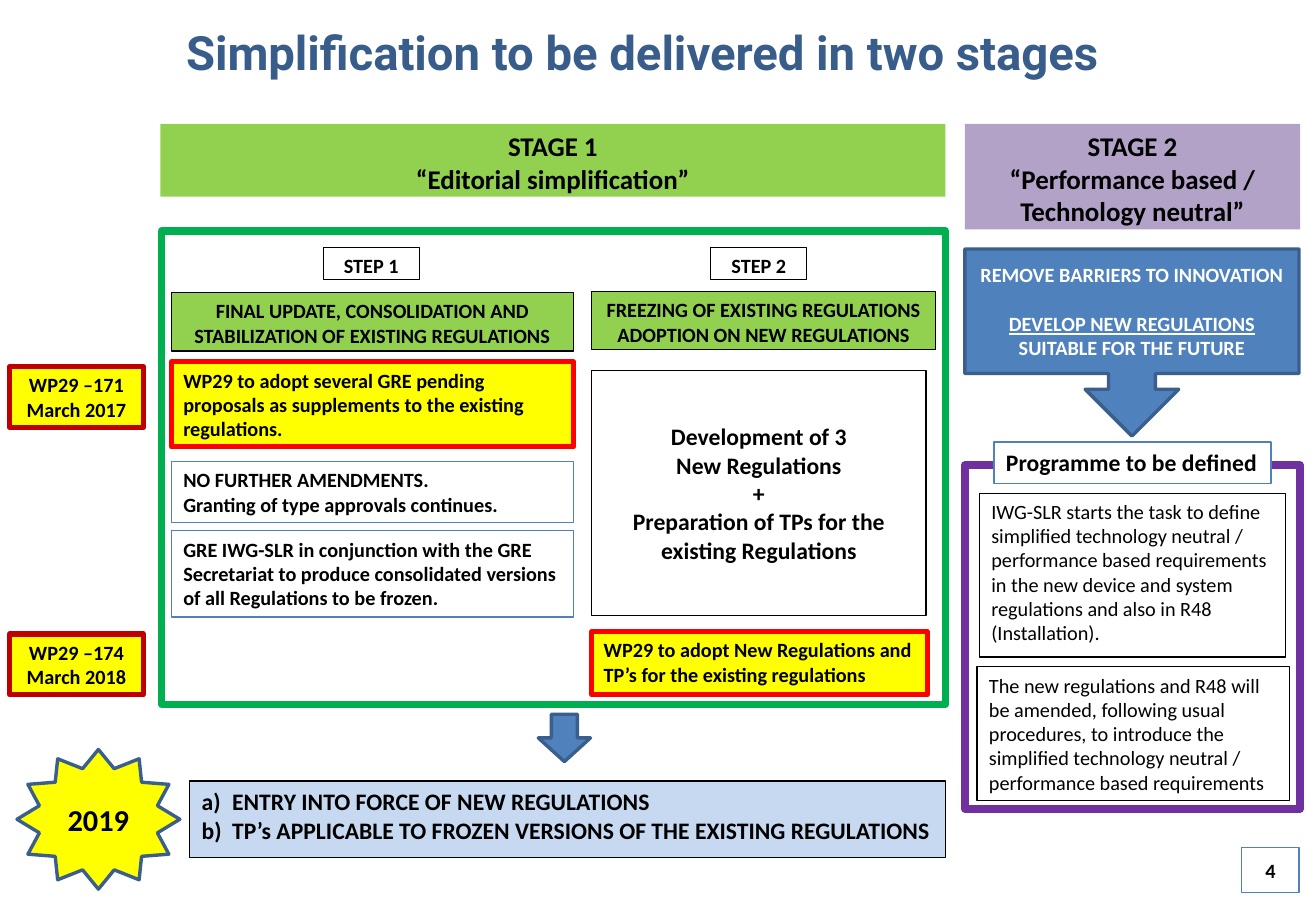
from lxml import etree
from pptx import Presentation
from pptx.dml.color import RGBColor
from pptx.enum.shapes import MSO_SHAPE
from pptx.enum.text import MSO_ANCHOR, MSO_AUTO_SIZE, PP_ALIGN
from pptx.oxml.ns import qn
from pptx.util import Inches, Pt

RECTANGLE = MSO_SHAPE.RECTANGLE
DOWN_ARROW = MSO_SHAPE.DOWN_ARROW
CALLOUT = MSO_SHAPE.DOWN_ARROW_CALLOUT
STAR = MSO_SHAPE.STAR_12_POINT
LEFT, CENTER = PP_ALIGN.LEFT, PP_ALIGN.CENTER
TOP, MIDDLE = MSO_ANCHOR.TOP, MSO_ANCHOR.MIDDLE
NO_AUTOFIT = MSO_AUTO_SIZE.NONE

BLACK, WHITE, YELLOW = "000000", "FFFFFF", "FFFF00"
GREEN, DARK_GREEN, PURPLE, LILAC = "92D050", "00B050", "7030A0", "B3A2C7"
BLUE, DARK_BLUE, PALE_BLUE, TITLE_BLUE = "4F81BD", "3A5F8C", "C6D9F1", "385D8A"
RED, DARK_RED = "FF0000", "C00000"


def color(value):
    return RGBColor.from_string(value)


def write(shape, text, size=12, bold=True, font="Calibri", text_color=BLACK,
          align=LEFT, anchor=TOP, wrap=True):
    frame = shape.text_frame
    frame.auto_size = NO_AUTOFIT
    frame.word_wrap = wrap
    frame.vertical_anchor = anchor
    frame.text = text
    for paragraph in frame.paragraphs:
        paragraph.alignment = align
        paragraph.space_before = Pt(0)
        for run in paragraph.runs:
            run.font.name = font
            run.font.size = Pt(size)
            run.font.bold = bold
            run.font.color.rgb = color(text_color)


class StageSlide:
    def __init__(self, presentation):
        layout = presentation.slide_layouts.get_by_name("Title and Content")
        self.slide = presentation.slides.add_slide(layout)

    def place(self, shape, bounds):
        shape.left, shape.top, shape.width, shape.height = map(Inches, bounds)

    def paint(self, shape, fill=None, line=None, width=0.75):
        if fill:
            shape.fill.solid()
            shape.fill.fore_color.rgb = color(fill)
        else:
            shape.fill.background()
        if line:
            shape.line.color.rgb = color(line)
            shape.line.width = Pt(width)
        else:
            shape.line.fill.background()

    def title(self, bounds, text):
        shape = self.slide.shapes.title
        self.place(shape, bounds)
        write(shape, text, size=28, font="Roboto", text_color=TITLE_BLUE,
              align=CENTER, anchor=MIDDLE)

    def lettered_list(self, bounds, items, fill, line):
        shape = self.slide.placeholders[1]
        self.place(shape, bounds)
        self.paint(shape, fill, line)
        write(shape, "\n".join(items), size=14)
        for paragraph in shape.text_frame.paragraphs:
            properties = paragraph._p.get_or_add_pPr()
            properties.set("marL", str(Inches(0.25)))
            properties.set("indent", str(Inches(-0.25)))
            bullet = etree.SubElement(properties, qn("a:buAutoNum"))
            bullet.set("type", "alphaLcParenR")

    def box(self, bounds, text="", fill=None, line=None, width=0.75,
            kind=RECTANGLE, **text_format):
        shape = self.slide.shapes.add_shape(kind, *map(Inches, bounds))
        shape.shadow.inherit = False
        self.paint(shape, fill, line, width)
        if text:
            write(shape, text, **text_format)
        return shape

    def callout(self, bounds, heading, goal, ending):
        shape = self.box(bounds, f"{heading}\n{goal}", BLUE, DARK_BLUE, 2, CALLOUT,
                         text_color=WHITE, align=CENTER, anchor=MIDDLE)
        shape.adjustments[3] = 0.666
        paragraph = shape.text_frame.paragraphs[1]
        paragraph.space_before = Pt(14.6)
        paragraph.runs[0].font.underline = True
        run = paragraph.add_run()
        run.text = ending
        run.font.name = "Calibri"
        run.font.size = Pt(12)
        run.font.bold = True
        run.font.color.rgb = color(WHITE)


def main():
    presentation = Presentation()
    presentation.slide_width = Inches(10.83)
    presentation.slide_height = Inches(7.5)
    page = StageSlide(presentation)

    page.title((0.75, 0.07, 9.07, 0.71), "Simplification to be delivered in two stages")

    page.box((7.94, 3.83, 2.76, 2.83), line=PURPLE, width=4.5)
    page.box((8.06, 4.06, 2.52, 1.35),
             "IWG-SLR starts the task to define simplified technology neutral / "
             "performance based requirements in the new device and system "
             "regulations and also in R48 (Installation).", line=BLACK, bold=False)
    page.box((8.04, 5.49, 2.57, 1.1),
             "The new regulations and R48 will be amended, following usual procedures, "
             "to introduce the simplified technology neutral / performance based "
             "requirements", line=BLACK, bold=False)

    for top, session in ((3.02, "WP29 –171 March 2017"), (5.22, "WP29 –174 March 2018")):
        page.box((0.08, top, 1.1, 0.5), session, YELLOW, DARK_RED, 3, align=CENTER)

    page.box((1.33, 1.9, 6.45, 3.9), line=DARK_GREEN, width=4.5)
    for left, width, stage_height, fill, stage in (
            (1.32, 6.46, 0.6, GREEN, "STAGE 1\n“Editorial simplification”"),
            (7.94, 2.76, 0.87, LILAC,
             "STAGE 2\n“Performance based / Technology neutral”")):
        page.box((left, 1.02, width, stage_height), stage, fill, size=16, align=CENTER)

    for left, step in ((2.66, "STEP 1"), (5.85, "STEP 2")):
        page.box((left, 2.04, 0.79, 0.26), step, line=BLACK, align=CENTER)
    for bounds, purpose in (
            ((1.41, 2.41, 3.31, 0.48),
             "FINAL UPDATE, CONSOLIDATION AND STABILIZATION OF EXISTING REGULATIONS"),
            ((4.87, 2.4, 2.83, 0.48),
             "FREEZING OF EXISTING REGULATIONS\nADOPTION ON NEW REGULATIONS")):
        page.box(bounds, purpose, GREEN, BLACK, align=CENTER)
    for bounds, adoption in (
            ((1.41, 2.98, 3.31, 0.7),
             "WP29 to adopt several GRE pending proposals as supplements to the "
             "existing regulations."),
            ((4.87, 5.2, 2.76, 0.52),
             "WP29 to adopt New Regulations and TP’s for the existing regulations")):
        page.box(bounds, adoption, YELLOW, RED, 3)
    for top, height, task in (
            (3.8, 0.5, "NO FURTHER AMENDMENTS.\nGranting of type approvals continues."),
            (4.37, 0.71,
             "GRE IWG-SLR in conjunction with the GRE Secretariat to produce "
             "consolidated versions of all Regulations to be frozen.")):
        page.box((1.41, top, 3.31, height), task, line=BLUE)
    page.box((4.87, 3.05, 2.75, 2.02),
             "Development of 3\nNew Regulations\n+\n"
             "Preparation of TPs for the existing Regulations",
             line=BLACK, size=14, align=CENTER, anchor=MIDDLE)

    page.callout((7.94, 2.05, 2.75, 1.54), "REMOVE BARRIERS TO INNOVATION",
                 "DEVELOP NEW REGULATIONS ", "SUITABLE FOR THE FUTURE")
    page.box((8.18, 3.64, 2.28, 0.34), "Programme to be defined", WHITE, BLUE,
             size=14, wrap=False)

    page.box((4.43, 5.88, 0.43, 0.39), fill=BLUE, line=DARK_BLUE, width=2,
             kind=DOWN_ARROW)
    page.lettered_list((1.56, 6.43, 6.22, 0.63),
                       ("ENTRY INTO FORCE OF NEW REGULATIONS",
                        "TP’s APPLICABLE TO FROZEN VERSIONS OF THE EXISTING REGULATIONS"),
                       PALE_BLUE, BLACK)
    page.box((0.14, 6.17, 1.34, 1.15), "2019", YELLOW, DARK_BLUE, 2, STAR,
             size=18, align=CENTER, anchor=MIDDLE)
    page.box((10.22, 6.98, 0.47, 0.37), "4", WHITE, BLUE, align=CENTER, anchor=MIDDLE)

    presentation.save("out.pptx")


if __name__ == "__main__":
    main()
